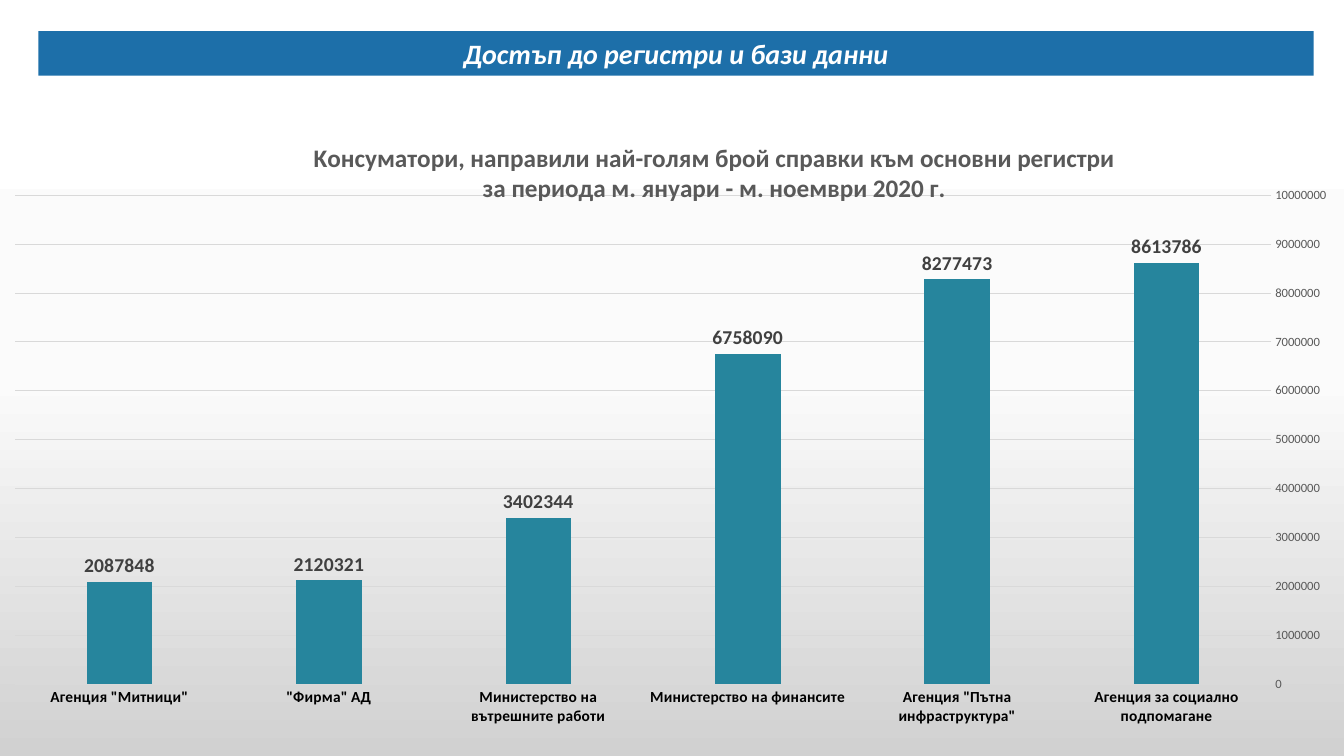
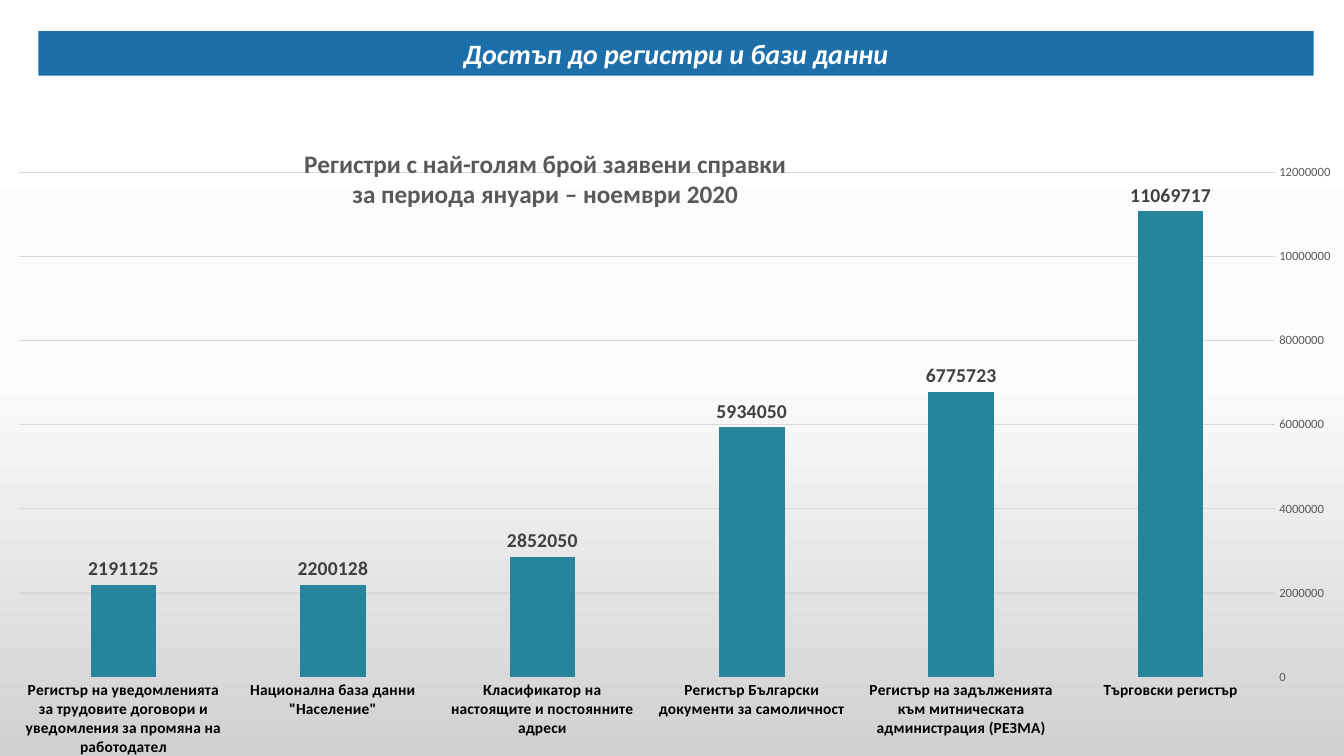
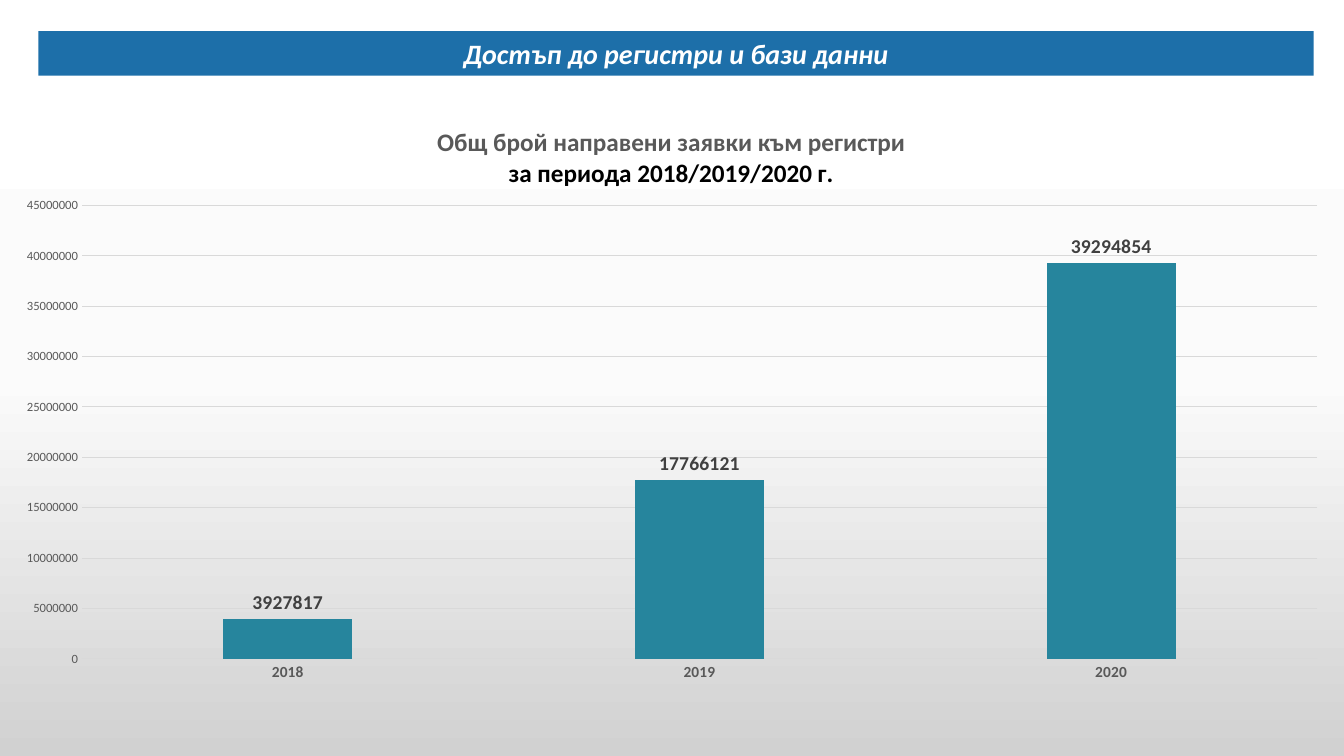
from copy import deepcopy
from dataclasses import dataclass

from lxml.etree import SubElement
from pptx import Presentation
from pptx.chart.data import CategoryChartData
from pptx.dml.color import RGBColor
from pptx.enum.chart import XL_CHART_TYPE, XL_LABEL_POSITION, XL_TICK_MARK
from pptx.enum.text import MSO_ANCHOR, PP_ALIGN
from pptx.oxml.ns import qn
from pptx.util import Inches, Pt

FONT = "Calibri"
BLUE, TEAL, WHITE, BLACK = "1D6FA9", "26859D", "FFFFFF", "000000"
GREY, DARK_GREY, RULE_GREY = "595959", "404040", "D9D9D9"
BACKDROP = [(0, "FFFFFF"), (0.5, "FBFBFB"), (1, "D1D1D1")]
SLIDE_WIDTH, SLIDE_HEIGHT = Inches(13.33), Inches(7.5)
SECTION = "Достъп до регистри и бази данни"
BAND_BOX = (2.85, 4.13, 94.9, 5.87)


@dataclass
class RegistryChart:
    """Content of one chart slide, with boxes in percent of their container."""

    headline: list
    headline_at: tuple
    counts: dict
    box: tuple
    plot_box: tuple
    scale_max: int
    scale_step: int
    label_color: str = BLACK
    from_right: bool = True


CHARTS = [
    RegistryChart(
        headline=[
            ("Kонсуматори, направили най-голям брой справки към основни регистри", GREY),
            ("за периода м. януари - м. ноември 2020 г.", GREY),
        ],
        headline_at=(23.1, 1.9),
        counts={
            "Агенция за социално подпомагане": 8613786,
            'Агенция "Пътна инфраструктура"': 8277473,
            "Министерство на финансите": 6758090,
            "Министерство на вътрешните работи": 3402344,
            '"Фирма" АД': 2120321,
            'Агенция "Митници"': 2087848,
        },
        box=(0, 16.67, 100, 83.33),
        plot_box=(1.1, 11, 93.5, 77.6),
        scale_max=10_000_000,
        scale_step=1_000_000,
    ),
    RegistryChart(
        headline=[
            ("Регистри с най-голям брой заявени справки", GREY),
            ("за периода януари – ноември 2020", GREY),
        ],
        headline_at=(22.4, 4.5),
        counts={
            "Търговски регистър": 11069717,
            "Регистър на задълженията към митническата администрация (РЕЗМА)": 6775723,
            "Регистър Български документи за самоличност": 5934050,
            "Класификатор на настоящите и постоянните адреси": 2852050,
            'Национална база данни "Население"': 2200128,
            "Регистър на уведомленията за трудовите договори "
            "и уведомления за промяна на работодател": 2191125,
        },
        box=(0, 15.2, 100, 86),
        plot_box=(1.4, 8.8, 93.5, 77.7),
        scale_max=12_000_000,
        scale_step=2_000_000,
    ),
    RegistryChart(
        headline=[
            ("Общ брой направени заявки към регистри", GREY),
            ("за периода 2018/2019/2020 г.", BLACK),
        ],
        headline_at=(32.3, 4.2),
        counts={"2018": 3927817, "2019": 17766121, "2020": 39294854},
        box=(0, 12.93, 100, 78.8),
        plot_box=(6.1, 18.1, 91.9, 76.1),
        scale_max=45_000_000,
        scale_step=5_000_000,
        label_color=GREY,
        from_right=False,
    ),
]


def rgb(color):
    """Turn a hex string into a colour."""
    return RGBColor.from_string(color)


def on_slide(box):
    """Turn a box in percent of the slide into lengths."""
    sides = (SLIDE_WIDTH, SLIDE_HEIGHT) * 2
    return [int(side * share / 100) for side, share in zip(sides, box)]


def style_font(font, size, color, bold=False):
    """Give a font the deck's face with a size, colour and weight."""
    font.name, font.size, font.bold = FONT, Pt(size), bold
    font.color.rgb = rgb(color)


def paint_backdrop(master):
    """Fill the master's background with the vertical gradient."""
    fill = master.background.fill
    fill.gradient()
    fill.gradient_angle = 270
    stops = next(master.element.iter(qn("a:gsLst")))
    stops.insert(1, deepcopy(stops[0]))
    for stop, (position, color) in zip(fill.gradient_stops, BACKDROP):
        stop.position = position
        stop.color.rgb = rgb(color)


def add_band(slide, box):
    """Format the title placeholder as the blue section band."""
    band = slide.shapes.title
    band.left, band.top, band.width, band.height = on_slide(box)
    band.fill.solid()
    band.fill.fore_color.rgb = rgb(BLUE)
    band.text_frame.text = SECTION
    band.text_frame.vertical_anchor = MSO_ANCHOR.MIDDLE
    heading = band.text_frame.paragraphs[0]
    heading.alignment = PP_ALIGN.CENTER
    style_font(heading.font, 20, WHITE, bold=True)
    heading.font.italic = True


def place_part(part, index, shares, inner=False):
    """Fix a chart part at shares of the chart's box, in percent."""
    for automatic in part.findall(qn("c:layout")):
        part.remove(automatic)
    layout = part.makeelement(qn("c:layout"))
    part.insert(index, layout)
    manual = SubElement(layout, qn("c:manualLayout"))
    if inner:
        SubElement(manual, qn("c:layoutTarget")).set("val", "inner")
    for side in "xy":
        SubElement(manual, qn(f"c:{side}Mode")).set("val", "edge")
    for side, share in zip("xywh", shares):
        SubElement(manual, qn(f"c:{side}")).set("val", f"{share / 100:.3f}")


def add_headline(chart, content):
    """Write and place the chart's title."""
    frame = chart.chart_title.text_frame
    for number, (line, color) in enumerate(content.headline):
        paragraph = frame.add_paragraph() if number else frame.paragraphs[0]
        paragraph.text = line
        style_font(paragraph.font, 18, color, bold=True)
        style_font(paragraph.runs[0].font, 18, color, bold=True)
    place_part(next(chart.element.iter(qn("c:title"))), 1, content.headline_at)


def style_axes(chart, content):
    """Format the category and value axes."""
    categories, scale = chart.category_axis, chart.value_axis
    for axis in (categories, scale):
        axis.major_tick_mark = axis.minor_tick_mark = XL_TICK_MARK.NONE
    style_font(categories.tick_labels.font, 11, content.label_color, bold=True)
    style_font(scale.tick_labels.font, 9, GREY)
    categories.reverse_order = content.from_right
    scale.minimum_scale, scale.maximum_scale = 0, content.scale_max
    scale.major_unit = content.scale_step
    scale.format.line.fill.background()
    for line in (categories.format.line, scale.major_gridlines.format.line):
        line.color.rgb = rgb(RULE_GREY)
        line.width = Pt(0.75)


def style_columns(plot):
    """Format the columns and their value labels."""
    plot.gap_width, plot.overlap, plot.vary_by_categories = 219, -27, False
    columns = plot.series[0].format.fill
    columns.solid()
    columns.fore_color.rgb = rgb(TEAL)
    plot.has_data_labels = True
    plot.data_labels.show_value = True
    plot.data_labels.position = XL_LABEL_POSITION.OUTSIDE_END
    style_font(plot.data_labels.font, 14, DARK_GREY, bold=True)


def add_registry_chart(slide, content):
    """Add the column chart within its box."""
    data = CategoryChartData()
    data.categories = list(content.counts)
    data.add_series("Series 1", list(content.counts.values()))
    chart = slide.shapes.add_chart(
        XL_CHART_TYPE.COLUMN_CLUSTERED, *on_slide(content.box), data
    ).chart
    style_font(chart.font, 10, BLACK)
    chart.has_legend = False
    add_headline(chart, content)
    style_axes(chart, content)
    style_columns(chart.plots[0])
    plot_area = next(chart.element.iter(qn("c:plotArea")))
    place_part(plot_area, 0, content.plot_box, inner=True)


def main():
    """Build the deck and save it."""
    deck = Presentation()
    deck.slide_width, deck.slide_height = SLIDE_WIDTH, SLIDE_HEIGHT
    paint_backdrop(deck.slide_master)
    for content in CHARTS:
        slide = deck.slides.add_slide(deck.slide_layouts[5])
        add_band(slide, BAND_BOX)
        add_registry_chart(slide, content)
    deck.save("out.pptx")


if __name__ == "__main__":
    main()
